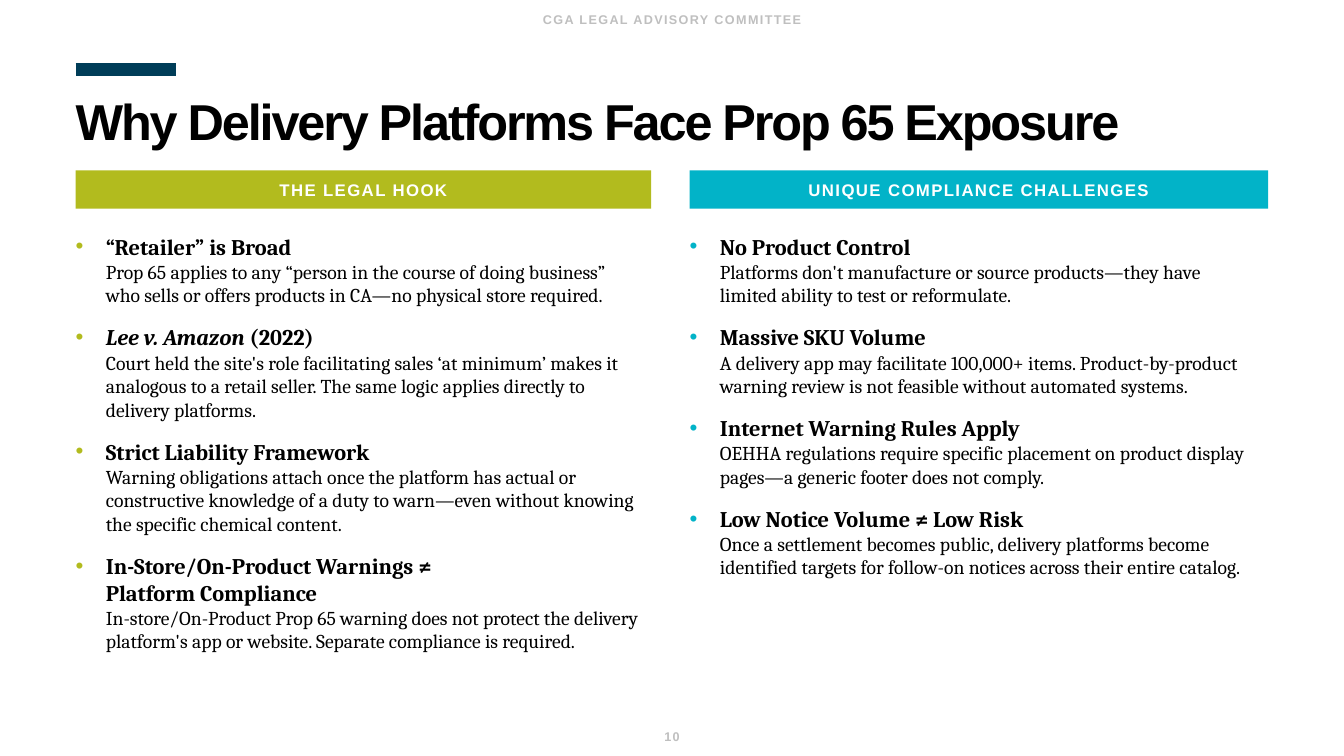
from dataclasses import dataclass

from lxml import etree
from pptx import Presentation
from pptx.dml.color import RGBColor
from pptx.enum.shapes import MSO_CONNECTOR
from pptx.enum.text import MSO_ANCHOR, MSO_AUTO_SIZE, PP_ALIGN
from pptx.oxml.ns import qn
from pptx.util import Pt

LEFT, CENTER = PP_ALIGN.LEFT, PP_ALIGN.CENTER
TOP, MIDDLE = MSO_ANCHOR.TOP, MSO_ANCHOR.MIDDLE
STRAIGHT = MSO_CONNECTOR.STRAIGHT
FIXED = MSO_AUTO_SIZE.NONE


@dataclass(frozen=True)
class Theme:
    sans: str = "Arial"
    serif: str = "Cambria"
    navy: str = "003D58"
    lime: str = "B2BB1E"
    teal: str = "02B3C8"
    black: str = "000000"
    white: str = "FFFFFF"
    gray: str = "BFBFBF"
    title: float = 36
    head: float = 16
    body: float = 14
    label: float = 12
    note: float = 9


THEME = Theme()
WIDE, HIGH = 960, 540
EDGE = 54
BAND = 27.4

# Each point: italic lead, bold heading lines, body text
HOOK = [
    ("", ["“Retailer” is Broad"],
     "Prop 65 applies to any “person in the course of doing business” who "
     "sells or offers products in CA—no physical store required."),
    ("Lee v. Amazon ", ["(2022)"],
     "Court held the site's role facilitating sales ‘at minimum’ makes it "
     "analogous to a retail seller. The same logic applies directly to "
     "delivery platforms."),
    ("", ["Strict Liability Framework"],
     "Warning obligations attach once the platform has actual or "
     "constructive knowledge of a duty to warn—even without knowing the "
     "specific chemical content."),
    ("", ["In-Store/On-Product Warnings ≠", "Platform Compliance"],
     "In-store/On-Product Prop 65 warning does not protect the delivery "
     "platform's app or website. Separate compliance is required."),
]
ISSUES = [
    ("", ["No Product Control"],
     "Platforms don't manufacture or source products—they have limited "
     "ability to test or reformulate."),
    ("", ["Massive SKU Volume"],
     "A delivery app may facilitate 100,000+ items. Product-by-product "
     "warning review is not feasible without automated systems."),
    ("", ["Internet Warning Rules Apply"],
     "OEHHA regulations require specific placement on product display "
     "pages—a generic footer does not comply."),
    ("", ["Low Notice Volume ≠ Low Risk"],
     "Once a settlement becomes public, delivery platforms become "
     "identified targets for follow-on notices across their entire catalog."),
]


def color(code):
    return RGBColor.from_string(code)


def place(shape, box, pads, anchor):
    """Set a shape's box and text frame; pads run left, top, right, bottom."""
    for name, val in zip(("left", "top", "width", "height"), box):
        setattr(shape, name, Pt(val))
    frame = shape.text_frame
    sides = ("margin_left", "margin_top", "margin_right", "margin_bottom")
    form = dict(zip(sides, map(Pt, pads)))
    form |= {"word_wrap": True, "auto_size": FIXED, "vertical_anchor": anchor}
    for name, val in form.items():
        setattr(frame, name, val)
    return frame


def write(para, text, size, tint, face=THEME.sans, bold=True, slant=False,
          track=0):
    """Add one formatted run; track is letter spacing in points."""
    run = para.add_run()
    run.text = text
    form = {"name": face, "size": Pt(size), "bold": bold, "italic": slant}
    for name, val in form.items():
        setattr(run.font, name, val)
    run.font.color.rgb = color(tint)
    if track:
        run.font._element.set("spc", str(round(track * 100)))


def wrap(para, size):
    """Add a line break as tall as the text around it."""
    etree.SubElement(para._p.add_br(), qn("a:rPr"), sz=str(size * 100))


def bullet(para, tint):
    prop = para._p.get_or_add_pPr()
    prop.set("marL", str(Pt(21.6)))
    prop.set("indent", str(-Pt(21.6)))
    tone = etree.SubElement(prop, qn("a:buClr"))
    etree.SubElement(tone, qn("a:srgbClr"), val=tint)
    etree.SubElement(prop, qn("a:buFont"), typeface=THEME.sans)
    etree.SubElement(prop, qn("a:buChar"), char="•")


def margin(slide, box, text):
    """Draw a gray centred line for the page's top or bottom edge."""
    shape = slide.shapes.add_textbox(0, 0, 0, 0)
    para = place(shape, box, (7.2, 3.6, 7.2, 3.6), MIDDLE).paragraphs[0]
    para.alignment = CENTER
    write(para, text, THEME.note, THEME.gray, track=1)


def title(slide, box, text):
    """Draw the accent bar above the title and the title itself."""
    left, top, wide, high = box
    rule = top - 5
    bar = slide.shapes.add_connector(
        STRAIGHT, Pt(left), Pt(rule), Pt(left + 72), Pt(rule))
    bar.line.color.rgb = color(THEME.navy)
    bar.line.width = Pt(9)
    etree.SubElement(bar._element.spPr, qn("a:effectLst"))
    frame = place(slide.shapes.title, box, (0, 14.4, 0, 0), TOP)
    para = frame.paragraphs[0]
    para.alignment, para.line_spacing = LEFT, 0.9
    write(para, text, THEME.title, THEME.black, track=-1.5)


def column(slide, box, slots, tint, label, points):
    """Fill a header band and the bulleted list below it."""
    left, top, wide, high = box
    band, body = (slide.placeholders[slot] for slot in slots)
    frame = place(band, (left, top, wide, BAND), (0, 3.6, 0, 3.6), MIDDLE)
    band.fill.solid()
    band.fill.fore_color.rgb = color(tint)
    para = frame.paragraphs[0]
    para.alignment, para.space_before = CENTER, Pt(0)
    write(para, label, THEME.label, THEME.white, track=1)

    drop = BAND + 13.6
    frame = place(body, (left, top + drop, wide, high - drop),
                  (0, 3.6, 7.2, 3.6), TOP)
    for pos, (lead, heads, text) in enumerate(points):
        para = frame.add_paragraph() if pos else frame.paragraphs[0]
        bullet(para, tint)
        para.space_before = Pt(12 if pos else 0)
        if lead:
            write(para, lead, THEME.head, THEME.black, THEME.serif, slant=True)
        for head in heads:
            write(para, head, THEME.head, THEME.black, THEME.serif)
            wrap(para, THEME.head)
        write(para, text, THEME.body, THEME.black, THEME.serif, bold=False)


def main():
    deck = Presentation()
    deck.slide_width, deck.slide_height = Pt(WIDE), Pt(HIGH)
    slide = deck.slides.add_slide(
        deck.slide_layouts.get_by_name("Comparison"))
    title(slide, (EDGE, 54.7, WIDE - 2 * EDGE, 80.6),
          "Why Delivery Platforms Face Prop 65 Exposure")
    column(slide, (EDGE, 121.7, 411.2, 386.6), (1, 2), THEME.lime,
           "THE LEGAL HOOK", HOOK)
    column(slide, (492.6, 121.7, 413.3, 364.3), (3, 4), THEME.teal,
           "UNIQUE COMPLIANCE CHALLENGES", ISSUES)
    margin(slide, (0, HIGH - BAND, WIDE, BAND), "10")
    margin(slide, (0, 0, WIDE, BAND), "CGA LEGAL ADVISORY COMMITTEE")
    deck.save("out.pptx")


if __name__ == "__main__":
    main()
